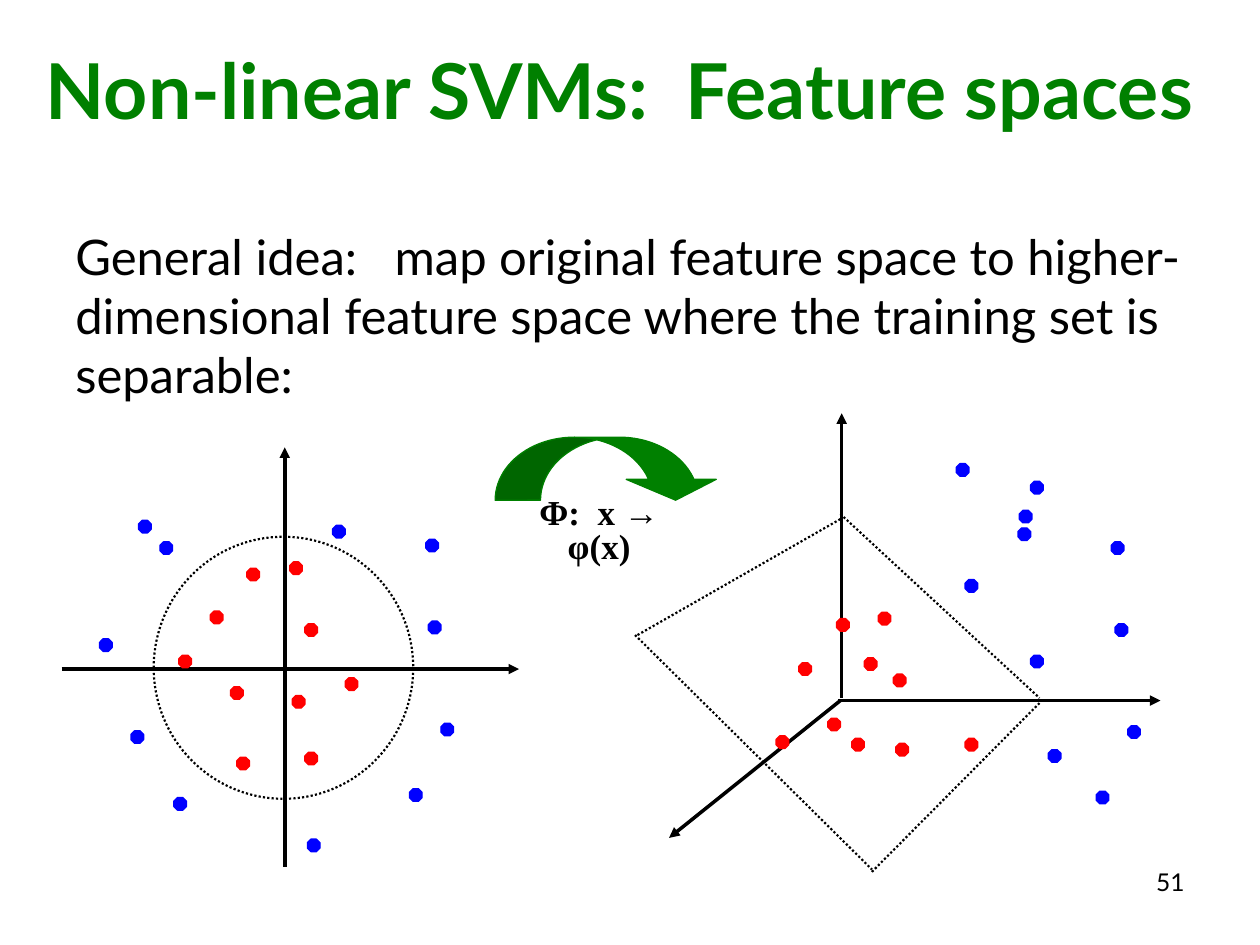
"""Builds a slide on mapping a feature space to a higher dimension."""
from dataclasses import dataclass

from lxml import etree
from pptx import Presentation
from pptx.dml.color import RGBColor
from pptx.enum.dml import MSO_LINE
from pptx.enum.shapes import MSO_CONNECTOR, MSO_SHAPE
from pptx.enum.text import MSO_ANCHOR, PP_ALIGN
from pptx.oxml.ns import qn
from pptx.util import Inches, Pt

LEFT, MID, RIGHT = PP_ALIGN.LEFT, PP_ALIGN.CENTER, PP_ALIGN.RIGHT
OCT, OVAL, CURVE = MSO_SHAPE.OCTAGON, MSO_SHAPE.OVAL, MSO_SHAPE.CURVED_DOWN_ARROW
STRAIGHT, DOTS = MSO_CONNECTOR.STRAIGHT, MSO_LINE.ROUND_DOT
MIDDLE = MSO_ANCHOR.MIDDLE
WIDE, HIGH = 10, 7.5
COLS = 100


@dataclass(frozen=True)
class Theme:
    """Colours, fonts and sizes."""
    ink: str = "000000"
    green: str = "008000"
    red: str = "FF0000"
    blue: str = "0000FF"
    sans: str = "Lato"
    serif: str = "Times New Roman"
    head: int = 44
    body: int = 28
    math: int = 20
    page: int = 14
    axis: float = 2
    dash: float = 1.25
    edge: float = 0.75


T = Theme()

TITLE = ("Non-linear SVMs:  Feature spaces", (1.7, 0.8, 95, 12.5))
IDEA = ("General idea:   map original feature space to higher-dimensional "
        "feature space where the training set is separable:", (5, 17.5, 90, 49.5))
PAGE = ("51", (71.7, 68.3, 23.3, 5.2))
MAP = ("Φ:  x → φ(x)", (39.3, 39.1, 16.5, 4.3))

AXES = [
    (22.6, 68.8, 22.6, 35.5), (4.9, 53.1, 41.2, 53.1),
    (66.8, 55.4, 66.8, 32.8), (66.5, 55.6, 92.1, 55.6),
    (66.7, 55.6, 53.1, 66.5),
]
PLANE = [
    (66.7, 40.8, 82.5, 55.4), (69.2, 69.2, 82.5, 55.8),
    (50.6, 50.4, 66.7, 41.2), (50.4, 50.4, 69.2, 69),
]
RING = (12.2, 42.6, 20.6, 20.8)
ARC = (39.3, 34.7, 17.9, 5)
BEND = (0.72, 1.43, 0.33)
CUT = 0.29
DOT = 1

POINTS = {
    T.red: [
        (23, 44.6), (16.7, 48.5), (18.3, 54.5), (24.2, 59.7), (19.6, 45.1),
        (14.2, 52), (18.8, 60.1), (24.2, 49.5), (27.4, 53.8), (23.2, 55.2),
        (69.7, 48.6), (63.4, 52.6), (67.6, 58.6), (76.6, 58.6), (66.4, 49.1),
        (68.6, 52.2), (71.1, 59), (70.9, 53.5), (65.7, 57), (61.6, 58.4),
    ],
    T.blue: [
        (34, 49.3), (32.5, 62.6), (7.9, 50.7), (24.4, 66.6), (35, 57.4),
        (13.8, 63.3), (10.4, 58), (11, 41.3), (26.4, 41.7), (12.7, 43),
        (33.8, 42.8),
        (88.5, 49.5), (87, 62.8), (81.8, 38.2), (81.8, 52), (89.5, 57.6),
        (76.6, 46), (83.2, 59.5), (80.9, 40.5), (80.8, 41.9), (75.9, 36.8),
        (88.2, 43),
    ],
}


def grid(*vals):
    return [Inches(v * WIDE / COLS) for v in vals]


def rgb(hue):
    return RGBColor.from_string(hue)


def write(box, text, size, hue, face=T.sans, bold=False, align=LEFT):
    box.text_frame.word_wrap = True
    par = box.text_frame.paragraphs[0]
    par.alignment = align
    run = par.add_run()
    run.text = text
    font = run.font
    font.name, font.size, font.bold = face, Pt(size), bold
    font.color.rgb = rgb(hue)
    return par


def label(slide, item, size, **look):
    text, area = item
    box = slide.shapes.add_textbox(*grid(*area))
    return write(box, text, size, T.ink, **look)


def stroke(line, hue, width, dash=None):
    line.color.rgb = rgb(hue)
    line.width = Pt(width)
    if dash:
        line.dash_style = dash


def draw(slide, kind, area, hue, adj=()):
    shape = slide.shapes.add_shape(kind, *grid(*area))
    shape.shadow.inherit = False
    for i, val in enumerate(adj):
        shape.adjustments[i] = val
    shape.fill.solid()
    shape.fill.fore_color.rgb = rgb(hue)
    stroke(shape.line, hue, T.edge)
    return shape


def link(slide, ends, width, dash=None, tip=False):
    wire = slide.shapes.add_connector(STRAIGHT, *grid(*ends))
    stroke(wire.line, T.ink, width, dash)
    if tip:
        etree.SubElement(wire.line._get_or_add_ln(), qn("a:tailEnd"), type="triangle")
    etree.SubElement(wire._element.spPr, qn("a:effectLst"))


def main():
    deck = Presentation()
    deck.slide_width, deck.slide_height = Inches(WIDE), Inches(HIGH)
    slide = deck.slides.add_slide(deck.slide_layouts[5])

    text, area = TITLE
    head = slide.shapes.title
    head.left, head.top, head.width, head.height = grid(*area)
    head.text_frame.vertical_anchor = MIDDLE
    write(head, text, T.head, T.green, bold=True, align=MID)
    label(slide, PAGE, T.page, align=RIGHT)
    label(slide, IDEA, T.body)

    for ends in AXES:
        link(slide, ends, T.axis, tip=True)
    for hue, spots in POINTS.items():
        for x, y in spots:
            draw(slide, OCT, (x, y, DOT, DOT), hue, (CUT,))
    ring = draw(slide, OVAL, RING, T.ink)
    ring.fill.background()
    stroke(ring.line, T.ink, T.dash, DOTS)
    for ends in PLANE:
        link(slide, ends, T.dash, DOTS)

    draw(slide, CURVE, ARC, T.green, BEND)
    par = label(slide, MAP, T.math, face=T.serif, bold=True, align=MID)
    par.line_spacing = 0.8
    deck.save("out.pptx")


if __name__ == "__main__":
    main()
